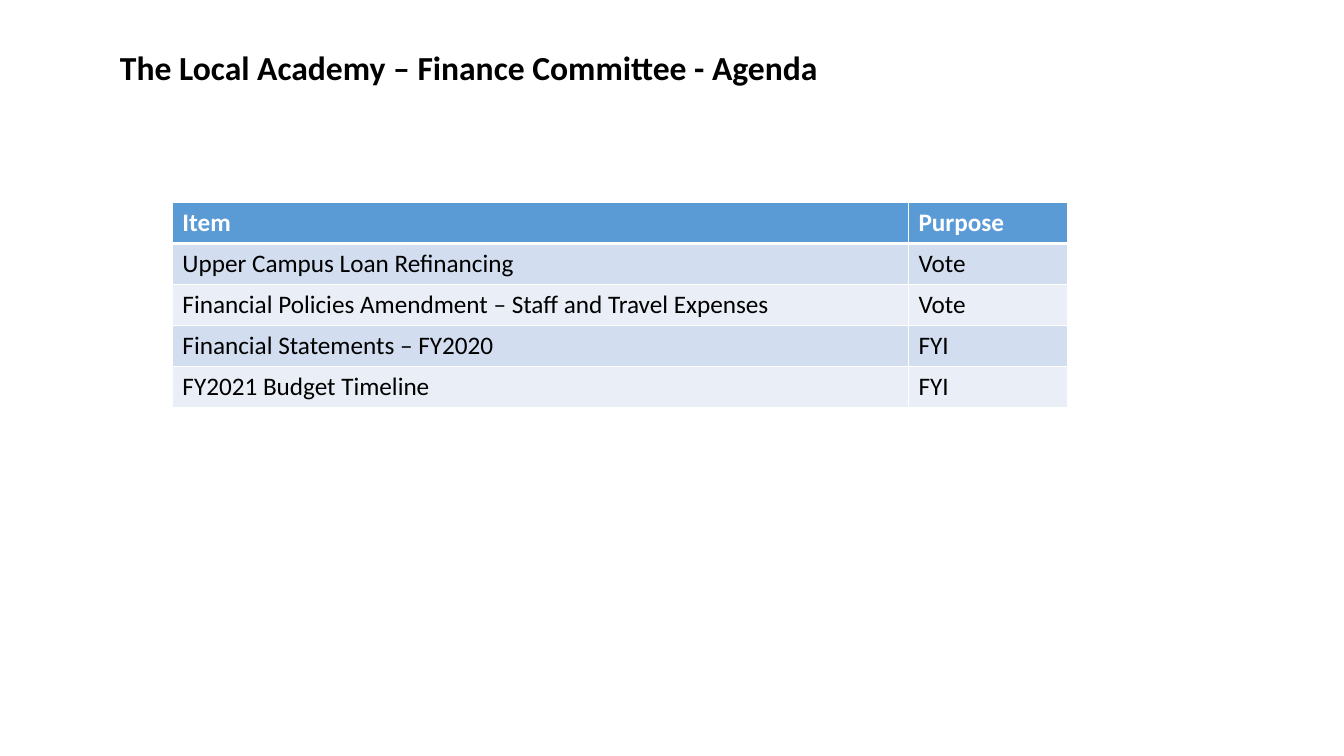
from pptx import Presentation
from pptx.dml.color import RGBColor
from pptx.enum.text import MSO_ANCHOR, MSO_AUTO_SIZE, PP_ALIGN
from pptx.oxml import parse_xml
from pptx.oxml.ns import nsdecls
from pptx.util import Inches, Pt

LEFT = PP_ALIGN.LEFT
TOP = MSO_ANCHOR.TOP
GROW = MSO_AUTO_SIZE.SHAPE_TO_FIT_TEXT

BLACK = RGBColor(0x00, 0x00, 0x00)
WHITE = RGBColor(0xFF, 0xFF, 0xFF)
HEADER_BLUE = RGBColor(0x5B, 0x9B, 0xD5)
BAND_FILLS = (RGBColor(0xD2, 0xDE, 0xEF), RGBColor(0xEA, 0xEF, 0xF7))

TITLE_LAYOUT = 5
TITLE = "The Local Academy – Finance Committee - Agenda"
AGENDA = [
    ("Item", "Purpose"),
    ("Upper Campus Loan Refinancing", "Vote"),
    ("Financial Policies Amendment – Staff and Travel Expenses", "Vote"),
    ("Financial Statements – FY2020", "FYI"),
    ("FY2021 Budget Timeline", "FYI"),
]
COLUMN_WIDTHS = (7.3, 1.58)


def set_text(text_frame, text, size, color, bold):
    paragraph = text_frame.paragraphs[0]
    paragraph.alignment = LEFT
    run = paragraph.add_run()
    run.text = text
    run.font.color.rgb = color
    font_format = {"name": "Calibri", "size": Pt(size), "bold": bold}
    for attribute, value in font_format.items():
        setattr(run.font, attribute, value)


def set_borders(cell, widths, color):
    """Draw the cell edges; widths maps an edge letter to points."""
    properties = cell._tc.get_or_add_tcPr()
    for position, edge in enumerate("LRTB"):
        line = parse_xml(
            f'<a:ln{edge} {nsdecls("a")} w="{Pt(widths[edge])}">'
            f'<a:solidFill><a:srgbClr val="{color}"/></a:solidFill>'
            f"</a:ln{edge}>"
        )
        properties.insert(position, line)


def add_title(slide, left, top, width, height):
    title = slide.shapes.title
    box = {"left": left, "top": top, "width": width, "height": height}
    for attribute, value in box.items():
        setattr(title, attribute, Inches(value))
    frame_format = {"word_wrap": False, "auto_size": GROW, "vertical_anchor": TOP}
    for attribute, value in frame_format.items():
        setattr(title.text_frame, attribute, value)
    set_text(title.text_frame, TITLE, 24, BLACK, True)


def add_agenda_table(slide, left, top, width, height):
    table = slide.shapes.add_table(
        len(AGENDA), len(COLUMN_WIDTHS),
        Inches(left), Inches(top), Inches(width), Inches(height),
    ).table
    for column, column_width in zip(table.columns, COLUMN_WIDTHS):
        column.width = Inches(column_width)

    for row_index, row in enumerate(AGENDA):
        is_header = row_index == 0
        # Body rows alternate between the two band fills
        fill = HEADER_BLUE if is_header else BAND_FILLS[(row_index - 1) % 2]
        # A thicker rule separates the header from the body
        borders = {
            "L": 1,
            "R": 1,
            "T": 3 if row_index == 1 else 1,
            "B": 3 if is_header else 1,
        }
        for column_index, text in enumerate(row):
            cell = table.cell(row_index, column_index)
            cell.fill.solid()
            cell.fill.fore_color.rgb = fill
            set_borders(cell, borders, WHITE)
            set_text(cell.text_frame, text, 18, WHITE if is_header else BLACK, is_header)


def main():
    presentation = Presentation()
    presentation.slide_width = Inches(13.33)
    presentation.slide_height = Inches(7.5)
    slide = presentation.slides.add_slide(presentation.slide_layouts[TITLE_LAYOUT])
    add_title(slide, 1.09, 0.42, 7.32, 0.5)
    add_agenda_table(slide, 1.71, 2.01, sum(COLUMN_WIDTHS), 2.03)
    presentation.save("out.pptx")


if __name__ == "__main__":
    main()
